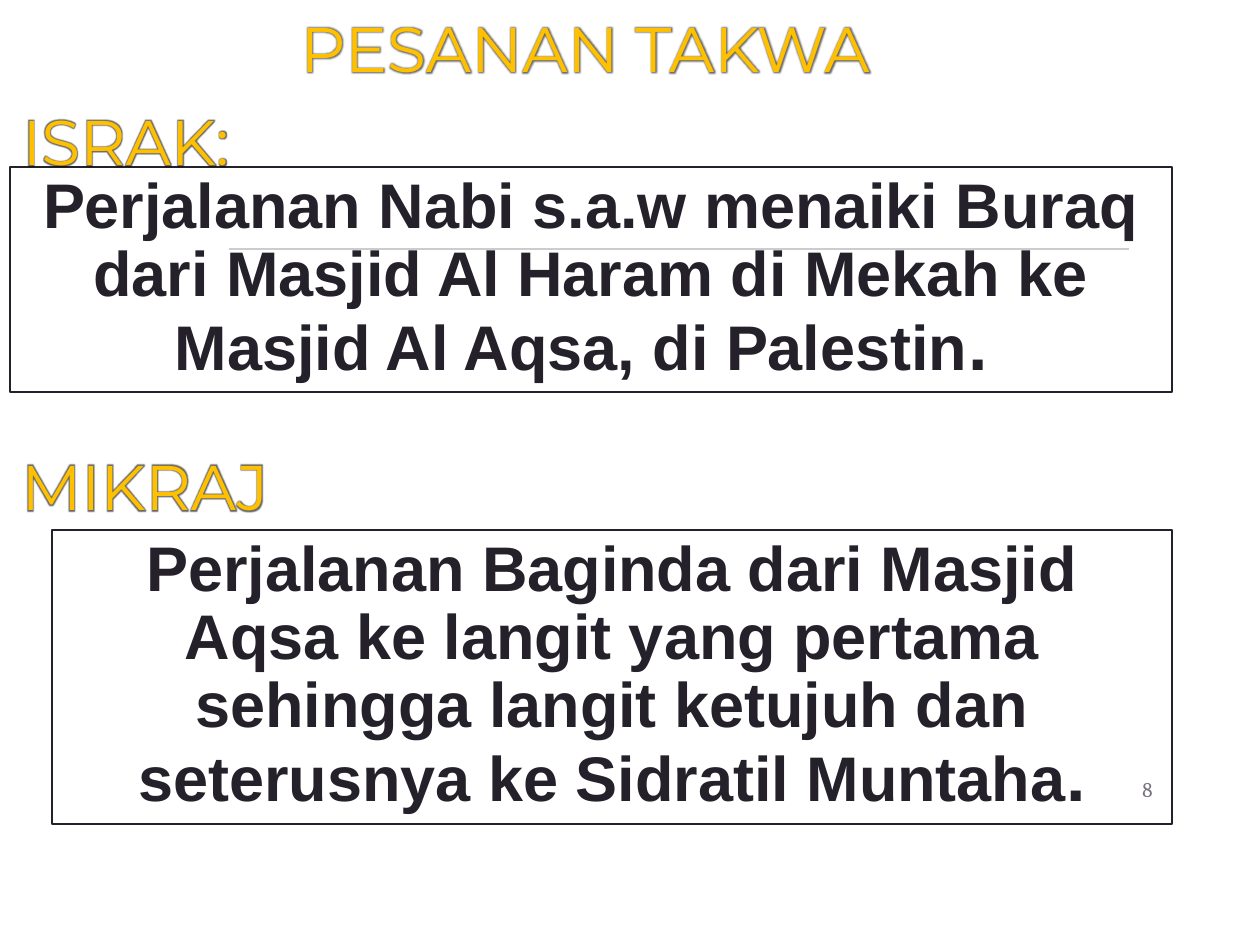
from lxml import etree
from pptx import Presentation
from pptx.dml.color import RGBColor
from pptx.enum.shapes import MSO_CONNECTOR, MSO_SHAPE
from pptx.enum.text import MSO_ANCHOR, MSO_AUTO_SIZE, PP_ALIGN
from pptx.oxml import parse_xml
from pptx.oxml.ns import nsdecls, qn
from pptx.util import Emu, Pt

LEFT, CENTER, RIGHT = PP_ALIGN.LEFT, PP_ALIGN.CENTER, PP_ALIGN.RIGHT
TOP, MIDDLE = MSO_ANCHOR.TOP, MSO_ANCHOR.MIDDLE
RECTANGLE, STRAIGHT = MSO_SHAPE.RECTANGLE, MSO_CONNECTOR.STRAIGHT
NO_AUTOFIT, GROW = MSO_AUTO_SIZE.NONE, MSO_AUTO_SIZE.SHAPE_TO_FIT_TEXT
TITLE_ONLY_LAYOUT = 5
PIXELS_PER_INCH = 126
COLORS = {"ink": "25212A", "gold": "FFC000", "outline": "000000",
          "rule": "CCCCCC", "number": "797281"}


def px(length):
    return Emu(round(length * 914400 / PIXELS_PER_INCH))


def color(name):
    return RGBColor.from_string(COLORS[name])


def write(shape, runs, font="Arial", fill="ink", bold=False, align=LEFT,
          anchor=TOP, spacing=None, autosize=NO_AUTOFIT):
    """Fill a shape with one paragraph made of (text, size) runs."""
    frame = shape.text_frame
    frame.word_wrap = True
    frame.auto_size = autosize
    frame.vertical_anchor = anchor
    paragraph = frame.paragraphs[0]
    paragraph.alignment = align
    paragraph.line_spacing = spacing
    for text, size in runs:
        run = paragraph.add_run()
        run.text = text
        run.font.name = font
        run.font.size = Pt(size)
        run.font.bold = bold
        run.font.color.rgb = color(fill)


def add_halo(shape):
    """Give the text a thin dark outline and a soft glow."""
    black = COLORS["outline"]
    outline = parse_xml(
        f'<a:ln {nsdecls("a")} w="12700"><a:solidFill><a:srgbClr val="{black}"/>'
        '</a:solidFill></a:ln>')
    glow = parse_xml(
        f'<a:effectLst {nsdecls("a")}><a:glow rad="38100"><a:srgbClr val="{black}">'
        '<a:alpha val="60000"/></a:srgbClr></a:glow></a:effectLst>')
    for run in shape.text_frame.paragraphs[0].runs:
        properties = run.font._element
        properties.insert(0, outline)
        properties.find(qn("a:solidFill")).addnext(glow)


def format_heading(shape, text, align=LEFT):
    write(shape, [(text, 36)], font="Montserrat", fill="gold", align=align,
          autosize=GROW)
    add_halo(shape)


def add_title(slide, left, top, width, height, text):
    title = slide.shapes.title
    title.left, title.top = px(left), px(top)
    title.width, title.height = px(width), px(height)
    format_heading(title, text, align=CENTER)


def add_heading(slide, left, top, width, height, text):
    box = slide.shapes.add_textbox(px(left), px(top), px(width), px(height))
    format_heading(box, text)


def add_statement(slide, left, top, width, height, text, ending):
    box = slide.shapes.add_shape(RECTANGLE, px(left), px(top), px(width), px(height))
    box.shadow.inherit = False
    box.fill.background()
    box.line.color.rgb = color("ink")
    box.line.width = Pt(0.75)
    write(box, [(text, 36), (ending, 40)], bold=True, align=CENTER,
          anchor=MIDDLE, spacing=0.9)


def add_rule(slide, left, top, width):
    rule = slide.shapes.add_connector(STRAIGHT, px(left), px(top),
                                      px(left + width), px(top))
    rule.line.color.rgb = color("rule")
    rule.line.width = Pt(0.75)
    etree.SubElement(rule._element.spPr, qn("a:effectLst"))


def add_slide_number(slide, left, top, width, height, number):
    box = slide.shapes.add_textbox(px(left), px(top), px(width), px(height))
    frame = box.text_frame
    frame.margin_top = frame.margin_bottom = px(13)
    write(box, [(number, 12)], font="Cambria", fill="number", align=RIGHT,
          anchor=MIDDLE)


def main():
    presentation = Presentation()
    presentation.slide_width, presentation.slide_height = px(1260), px(945)
    slide = presentation.slides.add_slide(
        presentation.slide_layouts[TITLE_ONLY_LAYOUT])

    add_rule(slide, 229, 249, 900)
    add_slide_number(slide, 1089, 753, 76, 72, "8")
    add_statement(
        slide, 10, 167, 1162, 225,
        "Perjalanan Nabi s.a.w menaiki Buraq dari Masjid Al Haram di Mekah "
        "ke Masjid Al Aqsa, di Palestin", ". ")
    add_statement(
        slide, 52, 530, 1120, 294,
        "Perjalanan Baginda dari Masjid Aqsa ke langit yang pertama sehingga "
        "langit ketujuh dan seterusnya ke Sidratil Muntaha", ".")
    add_title(slide, 146, 3, 878, 89, "PESANAN TAKWA")
    add_heading(slide, 10, 96, 878, 89, "ISRAK:")
    add_heading(slide, 9, 441, 878, 89, "MIKRAJ")

    presentation.save("out.pptx")


if __name__ == "__main__":
    main()
